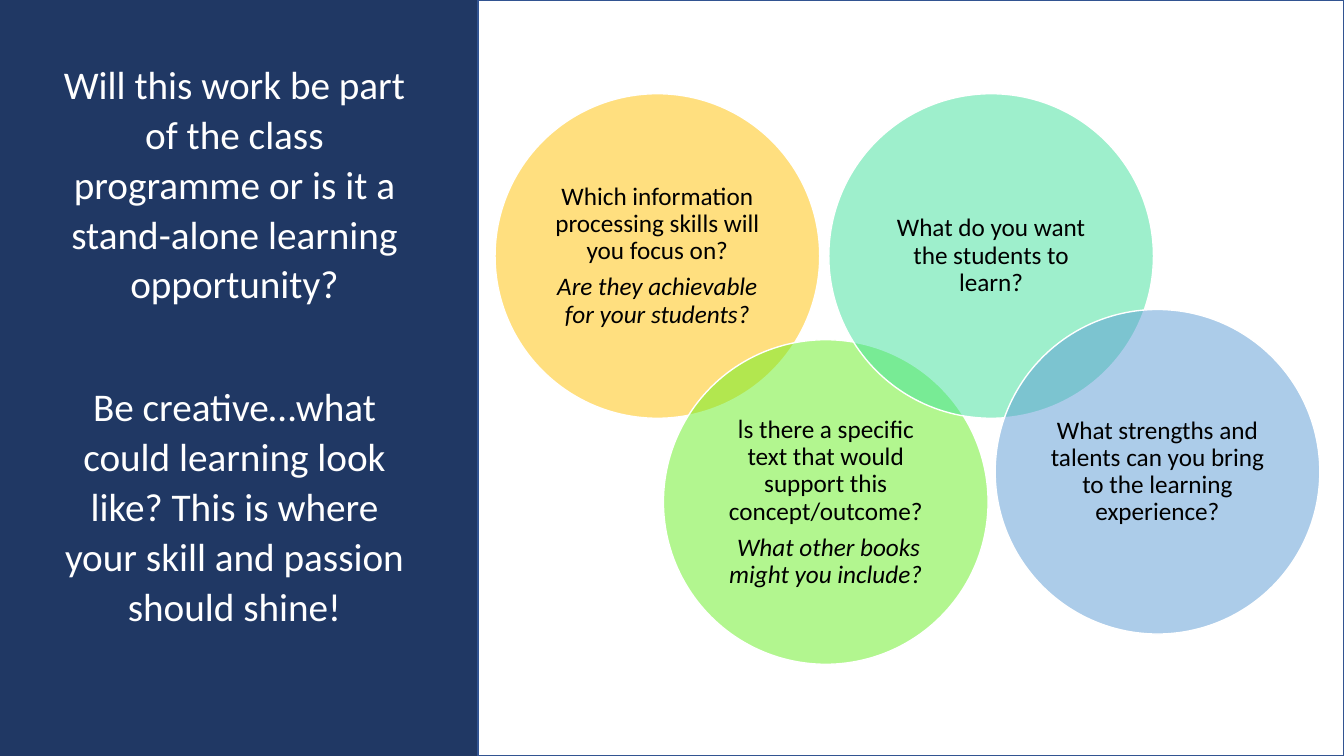
"""Build a slide of planning questions in overlapping circles beside a prompt panel."""
from lxml import etree
from pptx import Presentation
from pptx import util as u
from pptx.dml.color import RGBColor
from pptx.enum import shapes, text
from pptx.oxml import ns

COLORS = {
    "navy": "203864", "border": "325491", "white": "FFFFFF", "black": "000000",
    "amber": "FFC000", "lime": "67EF21", "mint": "3FE19B", "sky": "5B9BD5",
}
DIAMETER = 3.22
PROMPTS = [
    "Will this work be part of the class programme or is it a stand-alone learning opportunity?",
    "Be creative…what could learning look like? This is where your skill and passion should shine!",
]
CIRCLES = [
    (4.91, 0.93, "amber", 0.07, [
        [("Which information processing skills will you focus on?", {})],
        [("Are they achievable for your students?", {"italic": True})],
    ]),
    (6.58, 3.37, "lime", 0.08, [
        [("I", {"size": 19, "font": "Arial Narrow"}),
         ("s there a specific text that would support this concept/outcome?", {})],
        [(" What other books might you include?", {"italic": True})],
    ]),
    (8.22, 0.93, "mint", 0.07, [
        [("What do you want the students to learn?", {})],
    ]),
    (9.87, 3.07, "sky", 0.07, [
        [("What strengths and talents can you bring to the learning experience?", {})],
    ]),
]


def rgb(name):
    """Return the named colour."""
    return RGBColor.from_string(COLORS[name])


def add_run(p, content, size=18, font="Calibri", color="black", italic=None):
    """Append formatted text to a paragraph."""
    r = p.add_run()
    r.text = content
    r.font.size = u.Pt(size)
    r.font.name = font
    r.font.italic = italic
    r.font.color.rgb = rgb(color)


def write_paragraphs(tf, paragraphs, spacing, after, **defaults):
    """Fill a text frame with centred paragraphs, each a list of runs."""
    tf.word_wrap = True
    for i, runs in enumerate(paragraphs):
        p = tf.add_paragraph() if i else tf.paragraphs[0]
        p.alignment = text.PP_ALIGN.CENTER
        p.line_spacing = spacing
        p.space_after = u.Pt(after)
        for content, style in runs:
            add_run(p, content, **{**defaults, **style})


def add_filled_shape(s, kind, box, fill, line, alpha=None):
    """Add a flat shape with a thin outline and optional opacity in percent."""
    sp = s.shapes.add_shape(kind, *map(u.Inches, box))
    sp.shadow.inherit = False
    sp.fill.solid()
    sp.fill.fore_color.rgb = rgb(fill)
    sp.line.color.rgb = rgb(line)
    sp.line.width = u.Pt(1)
    if alpha is not None:
        color = sp.fill._xPr.find(".//" + ns.qn("a:srgbClr"))
        etree.SubElement(color, ns.qn("a:alpha"), val=str(alpha * 1000))
    return sp


def add_prompt(s):
    """Add the white prompts on the navy side panel."""
    tf = s.shapes.add_textbox(*map(u.Inches, (0.45, 0.52, 3.75, 5.8))).text_frame
    write_paragraphs(tf, [[(prompt, {})] for prompt in PROMPTS],
                     1.06, 52, size=28, color="white")


def add_circle(s, left, top, fill, inset, paragraphs):
    """Add a translucent circle holding a question."""
    sp = add_filled_shape(s, shapes.MSO_SHAPE.OVAL, (left, top, DIAMETER, DIAMETER),
                          fill, "white", alpha=50)
    tf = sp.text_frame
    tf.vertical_anchor = text.MSO_ANCHOR.MIDDLE
    tf.margin_left = tf.margin_right = u.Inches(inset)
    tf.margin_top = tf.margin_bottom = u.Inches(inset)
    write_paragraphs(tf, paragraphs, 0.9, 6.3)


def main():
    """Build and save the slide."""
    prs = Presentation()
    prs.slide_width, prs.slide_height = u.Inches(13.33), u.Inches(7.5)
    s = prs.slides.add_slide(prs.slide_layouts[6])
    s.background.fill.solid()
    s.background.fill.fore_color.rgb = rgb("navy")
    add_filled_shape(s, shapes.MSO_SHAPE.RECTANGLE, (4.74, 0, 8.59, 7.5), "white", "border")
    add_prompt(s)
    for circle in CIRCLES:
        add_circle(s, *circle)
    prs.save("out.pptx")


if __name__ == "__main__":
    main()
